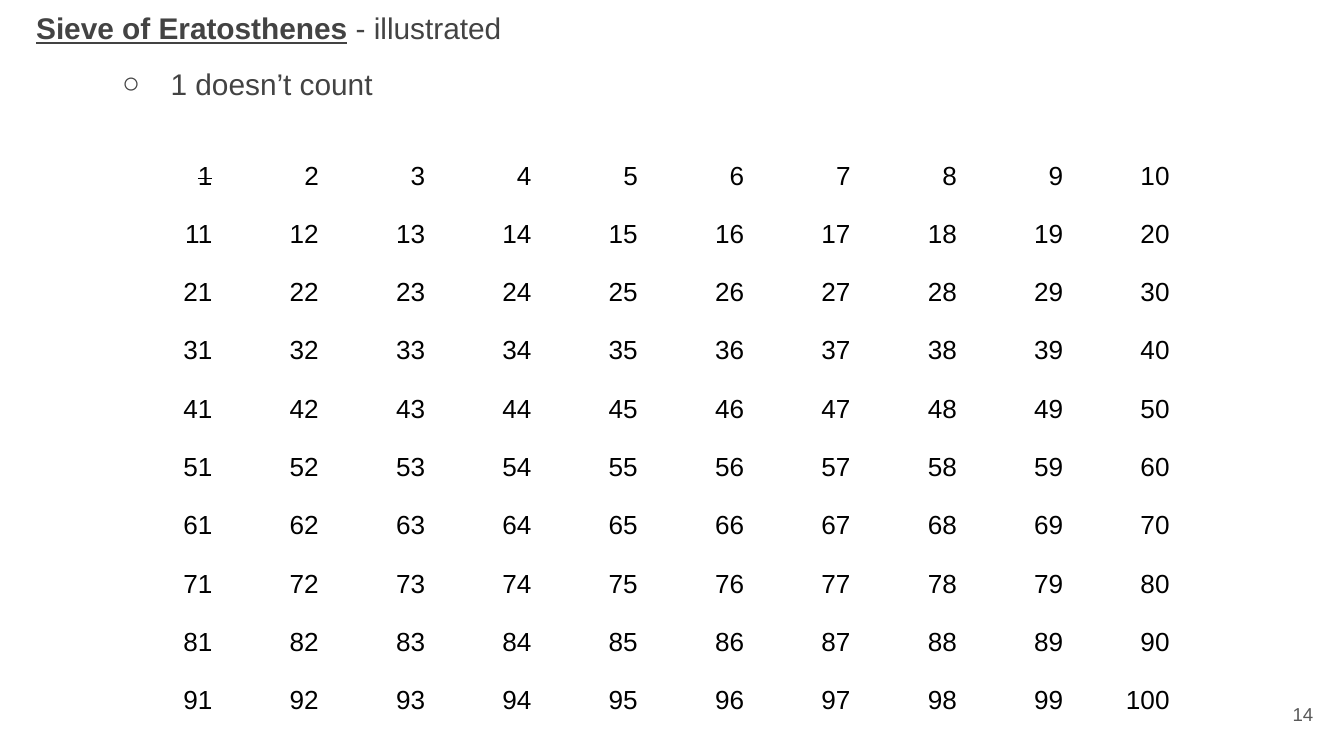
import lxml.etree
import pptx
import pptx.dml.color
import pptx.enum.text
import pptx.oxml.ns
import pptx.util

Pt = pptx.util.Pt
ALIGN = pptx.enum.text.PP_ALIGN
ANCHOR = pptx.enum.text.MSO_ANCHOR
INSET = Pt(7.2)
GRID_SIZE = 10
COL_WIDTH, ROW_HEIGHT = 57, 30.1
HEADING_COLOR = "434343"


def rgb(value):
    return pptx.dml.color.RGBColor.from_string(value)


def format_run(r, size, color, bold=False, underline=False):
    r.font.name = "Arial"
    r.font.size = Pt(size)
    r.font.color.rgb = rgb(color)
    r.font.bold = bold
    r.font.underline = underline


def set_insets(item):
    """Apply the common inset to a text frame or a table cell."""
    item.margin_left = item.margin_right = INSET
    item.margin_top = item.margin_bottom = INSET


def set_bullet(p, margin, indent, char=None, color=None):
    pPr = p._p.get_or_add_pPr()
    pPr.set("marL", str(Pt(margin)))
    pPr.set("indent", str(Pt(indent)))
    qn = pptx.oxml.ns.qn
    if char is None:
        lxml.etree.SubElement(pPr, qn("a:buNone"))
        return
    clr = lxml.etree.SubElement(pPr, qn("a:buClr"))
    lxml.etree.SubElement(clr, qn("a:srgbClr"), val=color)
    lxml.etree.SubElement(pPr, qn("a:buFont"), typeface="Arial")
    lxml.etree.SubElement(pPr, qn("a:buChar"), char=char)


def fill_heading(sp):
    sp.left, sp.top, sp.width, sp.height = Pt(12.2), Pt(-5), Pt(697.7), Pt(63.4)
    tf = sp.text_frame
    tf.auto_size = pptx.enum.text.MSO_AUTO_SIZE.NONE
    tf.vertical_anchor = ANCHOR.TOP
    tf.word_wrap = True
    set_insets(tf)
    heading, point = tf.paragraphs[0], tf.add_paragraph()
    point.level = 1
    for p in (heading, point):
        p.line_spacing = 1.15
        p.space_before = Pt(8)
    heading.space_after = Pt(0)
    point.space_after = Pt(8)
    set_bullet(heading, 0, 0)
    set_bullet(point, 72, -26, "○", HEADING_COLOR)
    for p, text, strong in (
        (heading, "Sieve of Eratosthenes", True),
        (heading, " - illustrated", False),
        (point, "1 doesn’t count", False),
    ):
        r = p.add_run()
        r.text = text
        format_run(r, 16, HEADING_COLOR, bold=strong, underline=strong)


def add_number_grid(s, crossed_out):
    """Add the table of 1 to 100, striking through the numbers in crossed_out."""
    table = s.shapes.add_table(
        GRID_SIZE, GRID_SIZE, Pt(64), Pt(79.2),
        Pt(COL_WIDTH * GRID_SIZE), Pt(ROW_HEIGHT * GRID_SIZE),
    ).table
    table.first_row = table.horz_banding = False
    for column in table.columns:
        column.width = Pt(COL_WIDTH)
    for row in table.rows:
        row.height = Pt(ROW_HEIGHT)
    for number, cell in enumerate(table.iter_cells(), start=1):
        cell.fill.background()
        set_insets(cell)
        p = cell.text_frame.paragraphs[0]
        p.text = str(number)
        p.alignment = ALIGN.RIGHT
        r = p.runs[0]
        format_run(r, 14, "000000")
        if number in crossed_out:
            r._r.get_or_add_rPr().set("strike", "sngStrike")


def add_slide_number(s, number):
    sp = s.shapes.add_textbox(Pt(667.4), Pt(367.2), Pt(43.2), Pt(31))
    tf = sp.text_frame
    tf.word_wrap = True
    tf.vertical_anchor = ANCHOR.MIDDLE
    set_insets(tf)
    p = tf.paragraphs[0]
    p.text = str(number)
    p.alignment = ALIGN.RIGHT
    format_run(p.runs[0], 10, "595959")


def main():
    prs = pptx.Presentation()
    prs.slide_width, prs.slide_height = Pt(720), Pt(405)
    s = prs.slides.add_slide(prs.slide_layouts.get_by_name("Title and Content"))
    # The heading and its point share the body, so the title is not needed.
    title = s.shapes.title._element
    title.getparent().remove(title)
    add_slide_number(s, 14)
    fill_heading(s.placeholders[1])
    add_number_grid(s, crossed_out={1})
    prs.save("out.pptx")


if __name__ == "__main__":
    main()
